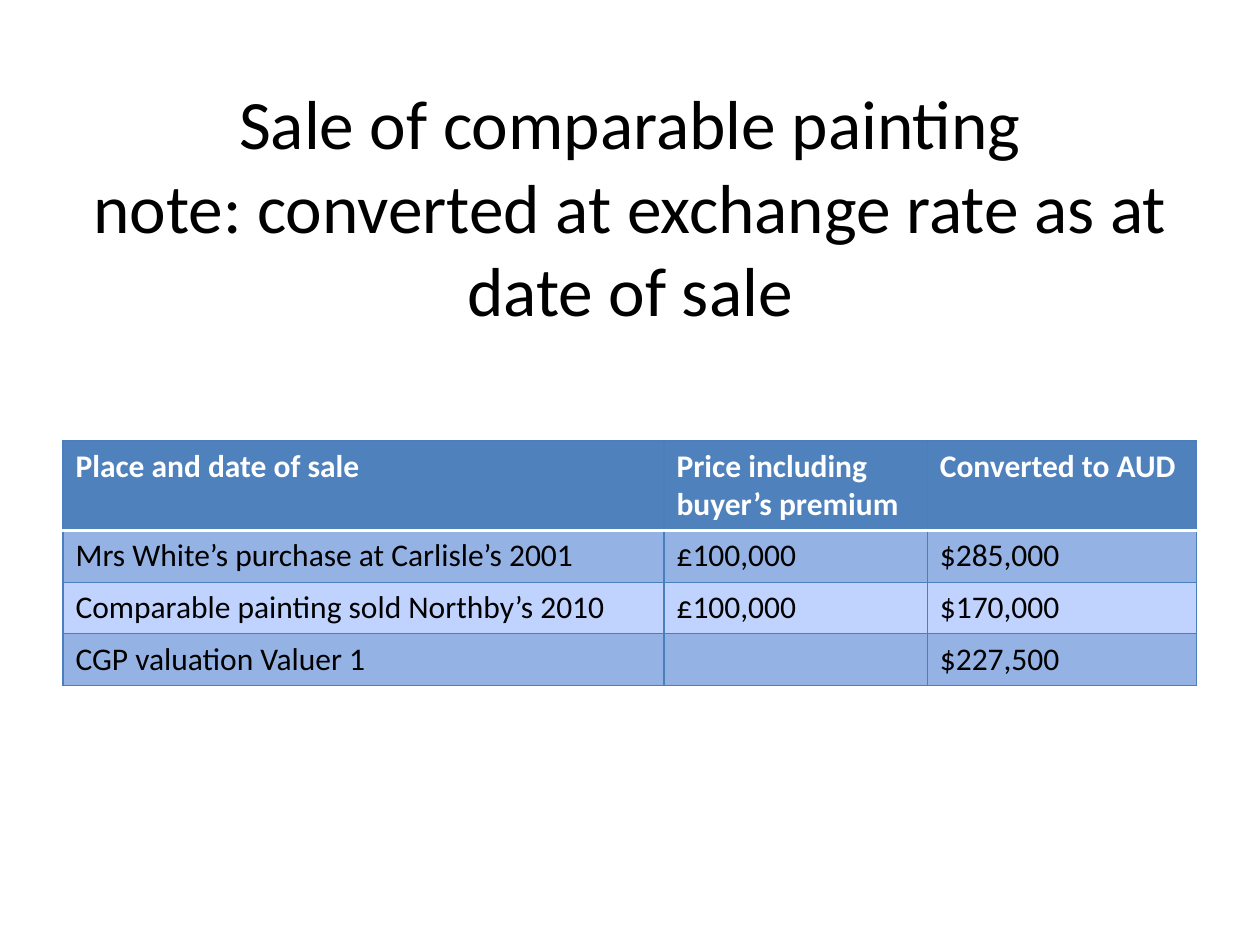
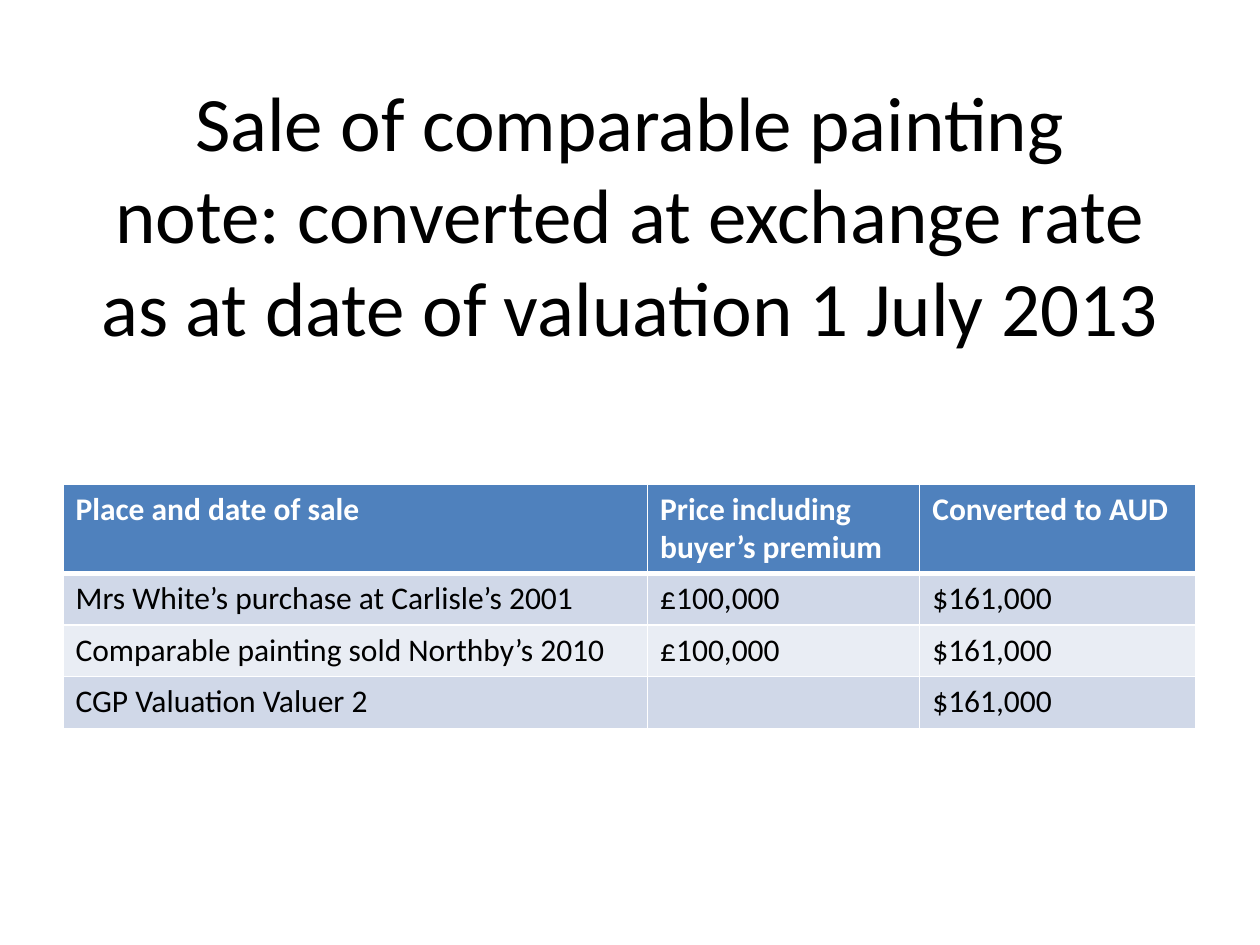
from dataclasses import dataclass

from lxml.etree import SubElement as Sub
from pptx import Presentation as Deck
from pptx.dml.color import RGBColor as Rgb
from pptx.enum.text import MSO_ANCHOR as Anchor, MSO_AUTO_SIZE as Fit, PP_ALIGN as Align
from pptx.oxml.ns import qn
from pptx.util import Inches, Pt


# Shared style
@dataclass(frozen=True)
class Theme:
    font: str = "Calibri"
    ink: str = "000000"
    white: str = "FFFFFF"
    head: str = "4F81BD"
    line: str = "4B7EBC"
    blue: tuple = ("94B2E4", "C0D3FF")
    pale: tuple = ("D0D8E8", "E9EDF4")
    cell: float = 18
    inset: float = 0.05


class Maker:
    def __init__(self, deck, theme):
        self.deck, self.theme, self.slide = deck, theme, None

    def style(self, frame, size, color, bold=False):
        for para in frame.paragraphs:
            for run in para.runs:
                font = run.font
                font.name, font.size, font.bold = self.theme.font, Pt(size), bold
                font.color.rgb = Rgb.from_string(color)

    def title(self, text, top, height, size, lift=0):
        """Start a slide; lift raises the centred text by half its value."""
        self.slide = self.deck.slides.add_slide(self.deck.slide_layouts[5])
        shape = self.slide.shapes.title
        shape.left, shape.top = Inches(0.5), Inches(top)
        shape.width, shape.height = Inches(9), Inches(height)
        frame = shape.text_frame
        frame.text = text
        frame.word_wrap, frame.auto_size = True, Fit.NONE
        frame.vertical_anchor = Anchor.MIDDLE
        frame.margin_top = Inches(self.theme.inset)
        frame.margin_bottom = Inches(self.theme.inset + lift)
        frame.paragraphs[0].alignment = Align.CENTER
        self.style(frame, size, self.theme.ink)

    def edge(self, cell, side, color, width):
        line = Sub(cell._tc.get_or_add_tcPr(), qn(f"a:ln{side}"), w=str(Pt(width)))
        Sub(Sub(line, qn("a:solidFill")), qn("a:srgbClr"), val=color)

    def table(self, rows, top, widths, bands, line, thin, thick):
        theme = self.theme
        heights = [0.71] + [0.41] * (len(rows) - 1)
        grid = self.slide.shapes.add_table(
            len(rows), len(widths), Inches(0.5), Inches(top),
            Inches(sum(widths)), Inches(sum(heights))).table
        for col, width in zip(grid.columns, widths):
            col.width = Inches(width)
        for r, row in enumerate(rows):
            grid.rows[r].height = Inches(heights[r])
            for c, text in enumerate(row):
                cell = grid.cell(r, c)
                # Borders, with a thick white rule under the header
                rule = (theme.white, thick)
                for side in "LRTB":
                    ruled = (r, side) in ((0, "B"), (1, "T"))
                    self.edge(cell, side, *(rule if ruled else (line, thin)))
                # Fill and text
                cell.fill.solid()
                fill = bands[(r - 1) % 2] if r else theme.head
                cell.fill.fore_color.rgb = Rgb.from_string(fill)
                cell.text_frame.text = text
                color = theme.ink if r else theme.white
                self.style(cell.text_frame, theme.cell, color, r == 0)


def sales(bought, sold, label, value):
    """Rows that both tables share, with their own converted values."""
    return [
        ("Place and date of sale", "Price including buyer’s premium", "Converted to AUD"),
        ("Mrs White’s purchase at Carlisle’s 2001", "£100,000", bought),
        ("Comparable painting sold Northby’s 2010", "£100,000", sold),
        (label, "", value),
    ]


def main():
    deck = Deck()
    deck.slide_width, deck.slide_height = Inches(10), Inches(7.5)
    theme = Theme()
    maker = Maker(deck, theme)
    lead = "Sale of comparable painting\vnote: converted at exchange rate as at date of "

    # Rate at date of sale
    maker.title(lead + "sale", 1.03, 1.86, 39.6, lift=0.66)
    maker.table(sales("$285,000", "$170,000", "CGP valuation Valuer 1", "$227,500"),
                3.5, (4.77, 2.09, 2.14), theme.blue, theme.line, 0.75, 2)

    # Rate at date of valuation
    maker.title(lead + "valuation 1 July 2013", 0.3, 2.78, 44)
    maker.table(sales("$161,000", "$161,000", "CGP Valuation Valuer 2", "$161,000"),
                3.84, (4.64, 2.16, 2.19), theme.pale, theme.white, 1, 3)

    deck.save("out.pptx")


if __name__ == "__main__":
    main()
